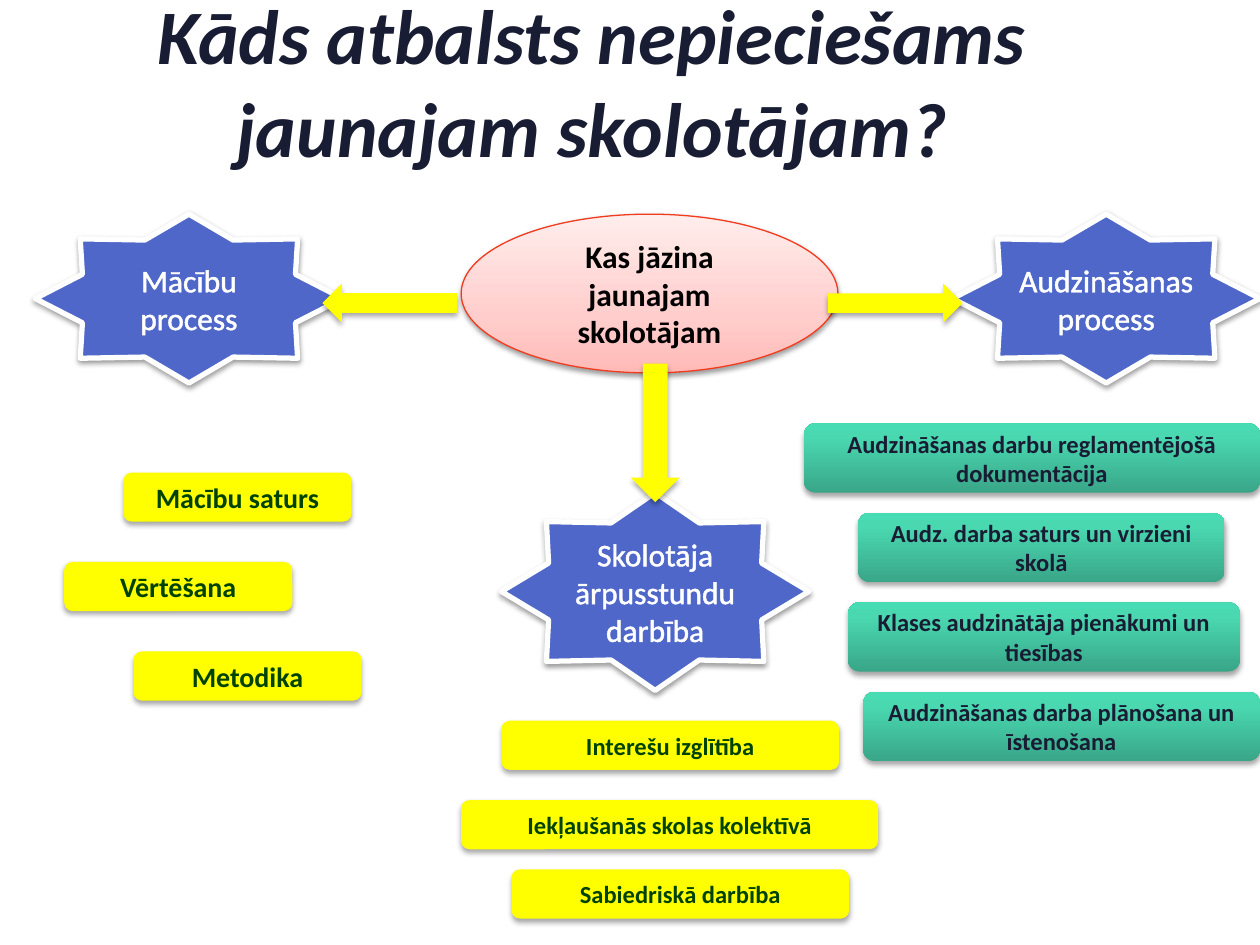
from lxml.etree import SubElement
from pptx import Presentation
from pptx.dml.color import RGBColor
from pptx.enum.shapes import MSO_SHAPE
from pptx.enum.text import MSO_ANCHOR, PP_ALIGN
from pptx.oxml.ns import qn
from pptx.util import Inches, Pt

COLUMNS, ROWS = 100, 75
YELLOW, GREEN, NAVY, BLUE, WHITE = "FFFF00", "004200", "191D34", "4E67C8", "FFFFFF"
MINT_BLEND = [(0, "39A688"), (80, "4AD8B1"), (100, "47DCB3")]
PINK_BLEND = [(0, "FFBAB7"), (35, "FFCECC"), (100, "FFEDEC")]

presentation = Presentation()
presentation.slide_width, presentation.slide_height = Inches(10), Inches(7.5)
slide = presentation.slides.add_slide(presentation.slide_layouts[6])


def color(value):
    return RGBColor.from_string(value)


def place(box):
    """Turn left, top, width, height in grid columns and rows into lengths."""
    column = presentation.slide_width / COLUMNS
    row = presentation.slide_height / ROWS
    return [round(n * unit) for n, unit in zip(box, (column, row, column, row))]


def add_solid(parent, value, alpha=None):
    rgb = SubElement(parent, qn("a:srgbClr"), val=value)
    if alpha:
        SubElement(rgb, qn("a:alpha"), val=str(alpha * 1000))


def paint(fill, paint_value):
    """Fill with one colour, or with a list of (percent, colour) stops, upwards."""
    if isinstance(paint_value, str):
        fill.solid()
        fill.fore_color.rgb = color(paint_value)
        return
    fill.gradient()
    fill.gradient_angle = 90


def set_stops(shape, blend):
    stop_list = shape._element.spPr.find(".//" + qn("a:gsLst"))
    stop_list.clear()
    for percent, value in blend:
        add_solid(SubElement(stop_list, qn("a:gs"), pos=str(percent * 1000)), value)


def add_shadow(shape, alpha, distance):
    shape.shadow.inherit = False
    effects = shape._element.spPr.find(qn("a:effectLst"))
    shadow = SubElement(effects, qn("a:outerShdw"), blurRad=str(Pt(3.1)),
                        dist=str(Pt(distance)), dir="5400000", rotWithShape="0")
    add_solid(shadow, "000000", alpha)


def write(shape, text, size, text_color, bold=True, italic=False, outline=None):
    frame = shape.text_frame
    frame.word_wrap = True
    frame.vertical_anchor = MSO_ANCHOR.MIDDLE
    frame.text = text
    paragraph = frame.paragraphs[0]
    paragraph.alignment = PP_ALIGN.CENTER
    run = paragraph.runs[0]
    font = run.font
    font.name, font.size, font.bold, font.italic = "Calibri", Pt(size), bold, italic
    font.color.rgb = color(text_color)
    if outline:
        line = SubElement(run._r.get_or_add_rPr(), qn("a:ln"), w=str(Pt(1.4)))
        add_solid(SubElement(line, qn("a:solidFill")), outline)
        run._r.rPr.insert(0, line)


def add_part(kind, box, fill, line=None, line_width=0, alpha=35, distance=1.8):
    shape = slide.shapes.add_shape(kind, *place(box))
    paint(shape.fill, fill)
    if not isinstance(fill, str):
        set_stops(shape, fill)
    if line:
        shape.line.color.rgb = color(line)
        shape.line.width = Pt(line_width)
    else:
        shape.line.fill.background()
    add_shadow(shape, alpha, distance)
    return shape


def add_title(box, text):
    title = slide.shapes.add_textbox(*place(box))
    write(title, text, 44, NAVY, italic=True, outline="FCFCFE")


def add_question(box, text):
    question = add_part(MSO_SHAPE.OVAL, box, PINK_BLEND, "F13C1E", 0.75, 38, 1.6)
    write(question, text, 18, "000000")


def add_area(box, text):
    star = add_part(MSO_SHAPE.STAR_8_POINT, box, BLUE, WHITE, 3, 38, 1.6)
    write(star, text, 18, WHITE, bold=False, outline=WHITE)


def add_arrow(box, rotation):
    arrow = add_part(MSO_SHAPE.LEFT_ARROW, box, YELLOW)
    arrow.rotation = rotation


def add_topics(corner, row_offsets, height, topics, fill, size, text_color):
    """Stack topics below a corner; each has a column offset, a width and a text."""
    left, top = corner
    for row, (indent, width, text) in zip(row_offsets, topics):
        topic = add_part(MSO_SHAPE.ROUNDED_RECTANGLE,
                         (left + indent, top + row, width, height), fill)
        write(topic, text, size, text_color)


def even_rows(count, step=7.1):
    return [i * step for i in range(count)]


add_title((2, 2.1, 90, 8.5), "Kāds atbalsts nepieciešams jaunajam skolotājam?")

# Central question and the three areas of support
add_question((36.6, 17, 29.9, 12.6), "Kas jāzina jaunajam skolotājam")
for area_box, area in [
    ((2.8, 17, 24.4, 13.4), "Mācību process"),
    ((75.6, 17, 24.4, 13.4), "Audzināšanas process"),
    ((39.8, 39.1, 24.4, 15.7), "Skolotāja ārpusstundu darbība"),
]:
    add_area(area_box, area)

# Arrows from the question to the areas
add_arrow((25.6, 22.5, 10.7, 3.1), 0)
add_arrow((65.7, 22.5, 10.7, 3.1), 180)
add_arrow((46.5, 32.4, 11, 3.9), 270)

# Topics of the learning process
add_topics((5.1, 37.5), even_rows(3), 3.9, [
    (4.7, 18.1, "Mācību saturs"),
    (0, 18.1, "Vērtēšana"),
    (5.5, 18.1, "Metodika"),
], YELLOW, 16, GREEN)

# Topics of the upbringing process
add_topics((63.8, 33.6), even_rows(4), 5.5, [
    (0, 36.2, "Audzināšanas darbu reglamentējošā dokumentācija"),
    (4.3, 29.1, "Audz. darba saturs un virzieni skolā"),
    (3.5, 31.1, "Klases audzinātāja pienākumi un tiesības"),
    (4.7, 31.5, "Audzināšanas darba plānošana un īstenošana"),
], MINT_BLEND, 14, NAVY)

# Topics of the work outside lessons
add_topics((36.6, 57.2), [0, 6.3, 11.8], 3.9, [
    (3.2, 26.8, "Interešu izglītība"),
    (0, 33.1, "Iekļaušanās skolas kolektīvā"),
    (4, 26.8, "Sabiedriskā darbība"),
], YELLOW, 14, GREEN)

presentation.save("out.pptx")
